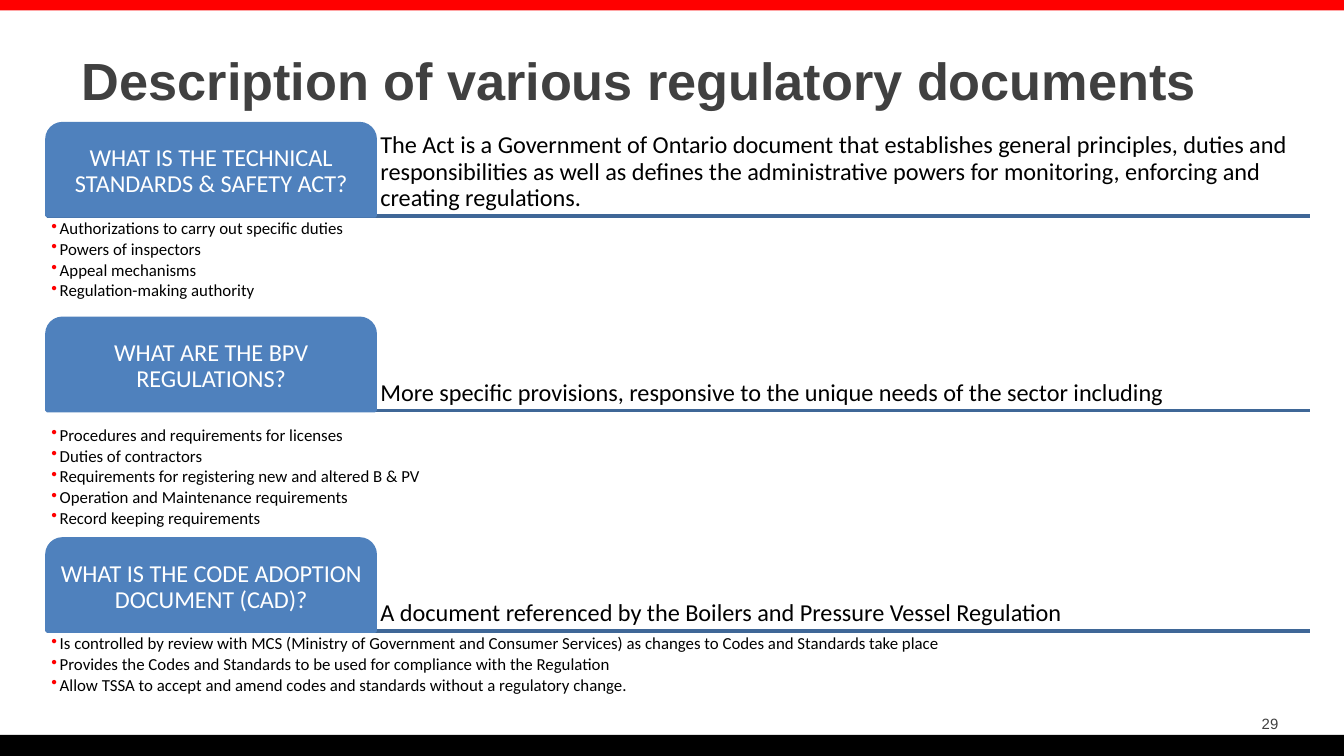
from collections import namedtuple
from dataclasses import dataclass

from lxml.etree import SubElement
from pptx import Presentation
from pptx.dml.color import RGBColor
from pptx.enum.shapes import MSO_CONNECTOR, MSO_SHAPE
from pptx.enum.text import MSO_ANCHOR, PP_ALIGN
from pptx.oxml.ns import qn
from pptx.util import Cm, Pt

Box = namedtuple("Box", "left top width height")
Section = namedtuple("Section", "top question answer points gap")


@dataclass(frozen=True)
class Theme:
    red: RGBColor = RGBColor(0xFF, 0x00, 0x00)
    black: RGBColor = RGBColor(0x00, 0x00, 0x00)
    white: RGBColor = RGBColor(0xFF, 0xFF, 0xFF)
    grey: RGBColor = RGBColor(0x40, 0x40, 0x40)
    tab: RGBColor = RGBColor(0x4F, 0x81, 0xBD)
    rule: RGBColor = RGBColor(0x3F, 0x67, 0x97)
    heading_font: str = "Arial"
    body_font: str = "Calibri"
    title_size: int = 28
    text_size: int = 13
    point_size: int = 9
    number_size: int = 8
    line_width: int = 2


THEME = Theme()
SLIDE_WIDTH, SLIDE_HEIGHT = 25.4, 14.29
SECTION_LEFT, SECTION_WIDTH = 0.89, 23.86
TAB_WIDTH, TAB_HEIGHT = 6.2, 1.74
INSET = 0.08
POINT_HEIGHT = 0.4
POINT_INDENT = 0.16

SECTIONS = [
    Section(2.34, "WHAT IS THE TECHNICAL STANDARDS & SAFETY ACT?",
            "The Act is a Government of Ontario document that establishes general principles, "
            "duties and responsibilities as well as defines the administrative powers for "
            "monitoring, enforcing and creating regulations.",
            ["Authorizations to carry out specific duties",
             "Powers of inspectors",
             "Appeal mechanisms",
             "Regulation-making authority"], 0),
    Section(6.02, "WHAT ARE THE BPV REGULATIONS?",
            "More specific provisions, responsive to the unique needs of the sector including",
            ["Procedures and requirements for licenses",
             "Duties of contractors",
             "Requirements for registering new and altered B & PV",
             "Operation and Maintenance requirements",
             "Record keeping requirements"], 0.23),
    Section(10.19, "WHAT IS THE CODE ADOPTION DOCUMENT (CAD)?",
            "A document referenced by the Boilers and Pressure Vessel Regulation",
            ["Is controlled by review with MCS (Ministry of Government and Consumer Services) "
             "as changes to Codes and Standards take place",
             "Provides the Codes and Standards to be used for compliance with the Regulation",
             "Allow TSSA to accept and amend codes and standards without a regulatory change."], 0),
]


def in_cm(box):
    return [Cm(length) for length in box]


def write(shape, text, size, color, font=THEME.body_font, bold=False,
          align=PP_ALIGN.LEFT, anchor=MSO_ANCHOR.TOP, inset=None, line_spacing=None):
    """Fill a shape with text, one paragraph for each line."""
    frame = shape.text_frame
    frame.text = text
    frame.word_wrap = True
    frame.vertical_anchor = anchor
    if inset is not None:
        frame.margin_left = frame.margin_right = Cm(inset)
        frame.margin_top = frame.margin_bottom = Cm(inset)
    for paragraph in frame.paragraphs:
        paragraph.alignment = align
        paragraph.line_spacing = line_spacing
        for run in paragraph.runs:
            run.font.name = font
            run.font.size = Pt(size)
            run.font.bold = bold
            run.font.color.rgb = color


def add_filled(slide, kind, box, color):
    shape = slide.shapes.add_shape(kind, *in_cm(box))
    shape.shadow.inherit = False
    shape.fill.solid()
    shape.fill.fore_color.rgb = color
    shape.line.fill.background()
    return shape


def add_rule(slide, left, top, width):
    rule = slide.shapes.add_connector(
        MSO_CONNECTOR.STRAIGHT, Cm(left), Cm(top), Cm(left + width), Cm(top))
    rule.line.color.rgb = THEME.rule
    rule.line.width = Pt(THEME.line_width)
    SubElement(rule._element.spPr, qn("a:effectLst"))


def add_bullet(paragraph):
    properties = paragraph._p.get_or_add_pPr()
    properties.set("marL", str(Cm(POINT_INDENT)))
    properties.set("indent", str(-Cm(POINT_INDENT)))
    bullet_color = SubElement(properties, qn("a:buClr"))
    SubElement(bullet_color, qn("a:srgbClr"), val=str(THEME.red))
    SubElement(properties, qn("a:buChar"), char="•")


def add_frame(slide, box, number):
    """Place the top and bottom bands and the slide number."""
    add_filled(slide, MSO_SHAPE.RECTANGLE, box._replace(height=0.2), THEME.red)
    band_top = box.height - 0.4
    add_filled(slide, MSO_SHAPE.RECTANGLE,
               box._replace(top=box.top + band_top, height=0.4), THEME.black)
    number_box = Box(box.left + box.width - 3.81, box.top + band_top - 0.5, 2.82, 0.61)
    write(slide.shapes.add_textbox(*in_cm(number_box)), number, THEME.number_size,
          THEME.grey, THEME.heading_font, align=PP_ALIGN.RIGHT)


def add_title(slide, box, text):
    write(slide.shapes.add_textbox(*in_cm(box)), text, THEME.title_size,
          THEME.grey, THEME.heading_font, bold=True)


def add_header(slide, box, question, answer):
    """Place a question tab and its answer on a rule along the bottom of the box."""
    add_rule(slide, box.left, box.top + box.height, box.width)

    tab = add_filled(slide, MSO_SHAPE.ROUND_2_SAME_RECTANGLE,
                     box._replace(width=TAB_WIDTH), THEME.tab)
    tab.line.color.rgb = THEME.tab
    tab.line.width = Pt(THEME.line_width)
    write(tab, question, THEME.text_size, THEME.white, align=PP_ALIGN.CENTER,
          anchor=MSO_ANCHOR.MIDDLE, inset=INSET, line_spacing=0.9)

    answer_box = box._replace(left=box.left + TAB_WIDTH + 0.02, width=box.width - TAB_WIDTH)
    write(slide.shapes.add_textbox(*in_cm(answer_box)), answer, THEME.text_size,
          THEME.black, anchor=MSO_ANCHOR.BOTTOM, inset=INSET, line_spacing=0.9)


def add_points(slide, box, points):
    text_box = slide.shapes.add_textbox(*in_cm(box))
    write(text_box, "\n".join(points), THEME.point_size, THEME.black,
          inset=INSET, line_spacing=0.9)
    for paragraph in text_box.text_frame.paragraphs:
        paragraph.level = 1
        paragraph.space_after = Pt(0.15 * THEME.point_size)
        add_bullet(paragraph)


def add_section(slide, box, section):
    add_header(slide, box._replace(height=TAB_HEIGHT), section.question, section.answer)
    used = TAB_HEIGHT + section.gap
    add_points(slide, box._replace(top=box.top + used, height=box.height - used),
               section.points)


def main():
    presentation = Presentation()
    presentation.slide_width = Cm(SLIDE_WIDTH)
    presentation.slide_height = Cm(SLIDE_HEIGHT)
    slide = presentation.slides.add_slide(presentation.slide_layouts[6])

    add_frame(slide, Box(0, 0, SLIDE_WIDTH, SLIDE_HEIGHT), "29")
    add_title(slide, Box(1.3, 0.78, 21.82, 1.22), "Description of various regulatory documents")
    for section in SECTIONS:
        height = TAB_HEIGHT + section.gap + 2 * INSET + POINT_HEIGHT * len(section.points)
        add_section(slide, Box(SECTION_LEFT, section.top, SECTION_WIDTH, height), section)

    presentation.save("out.pptx")


if __name__ == "__main__":
    main()
